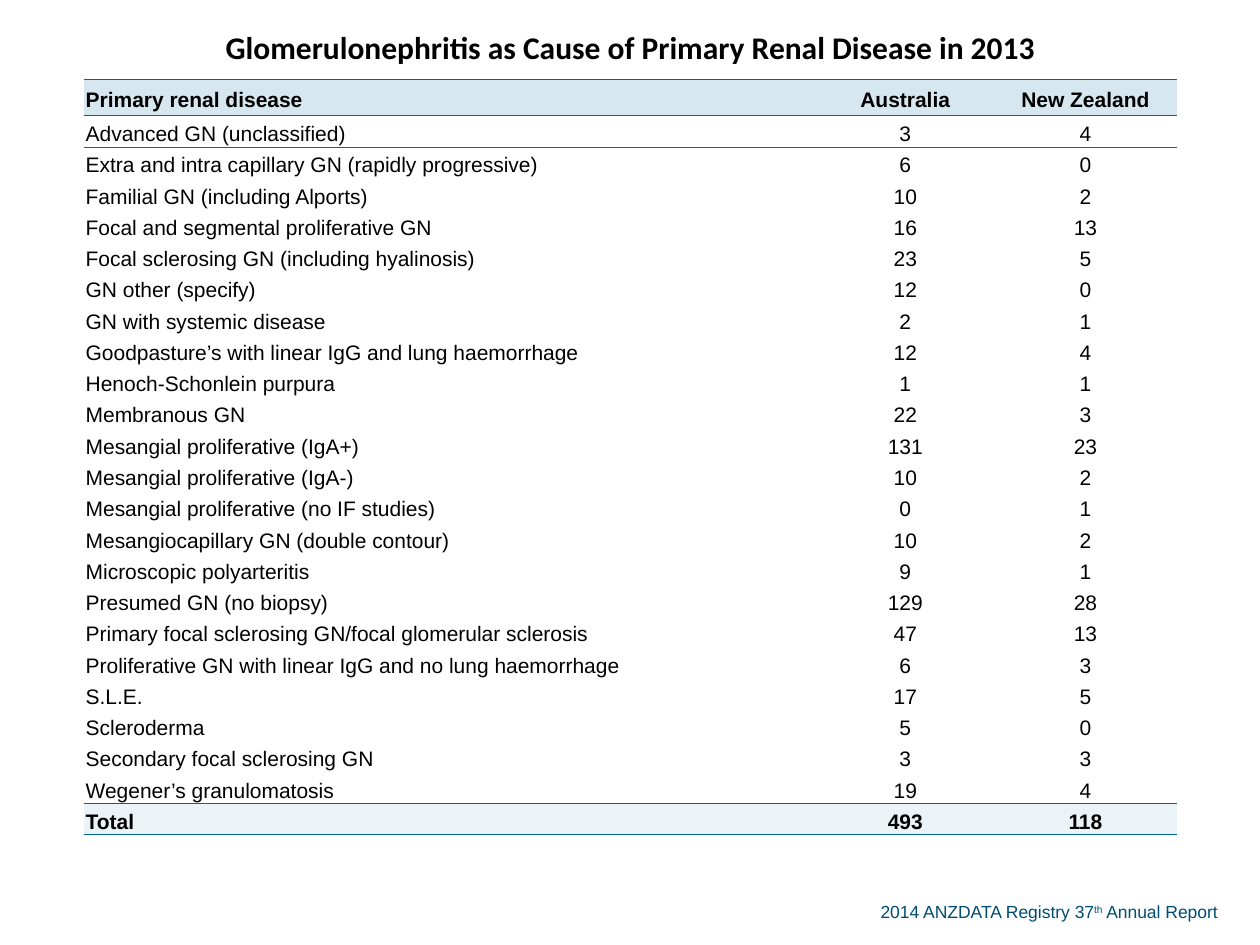
from dataclasses import dataclass

from lxml.etree import SubElement
from pptx import Presentation
from pptx.dml.color import RGBColor
from pptx.enum.text import MSO_ANCHOR, PP_ALIGN
from pptx.oxml.ns import qn
from pptx.util import Inches, Pt


@dataclass(frozen=True)
class Theme:
    """Colours, fonts and type sizes of the slide."""
    ink: str = "000000"
    rule: str = "006699"
    header: str = "D7E7EF"
    total: str = "EBF3F7"
    source: str = "004D73"
    body_font: str = "Arial"
    title_font: str = "Calibri"
    title_size: int = 18
    body_size: int = 12
    source_size: int = 10
    rule_width: float = 0.5
    line_spacing: float = 1.19


THEME = Theme()
NO_GRID_STYLE = "{2D5ABB26-0587-4C30-8999-92F81FD0307C}"
TITLE = "Glomerulonephritis as Cause of Primary Renal Disease in 2013"
HEADER = ("Primary renal disease", "Australia", "New Zealand")
DISEASES = [
    ("Advanced GN (unclassified)", 3, 4),
    ("Extra and intra capillary GN (rapidly progressive)", 6, 0),
    ("Familial GN (including Alports)", 10, 2),
    ("Focal and segmental proliferative GN", 16, 13),
    ("Focal sclerosing GN (including hyalinosis)", 23, 5),
    ("GN other (specify)", 12, 0),
    ("GN with systemic disease", 2, 1),
    ("Goodpasture’s with linear IgG and lung haemorrhage", 12, 4),
    ("Henoch-Schonlein purpura", 1, 1),
    ("Membranous GN", 22, 3),
    ("Mesangial proliferative (IgA+)", 131, 23),
    ("Mesangial proliferative (IgA-)", 10, 2),
    ("Mesangial proliferative (no IF studies)", 0, 1),
    ("Mesangiocapillary GN (double contour)", 10, 2),
    ("Microscopic polyarteritis", 9, 1),
    ("Presumed GN (no biopsy)", 129, 28),
    ("Primary focal sclerosing GN/focal glomerular sclerosis", 47, 13),
    ("Proliferative GN with linear IgG and no lung haemorrhage", 6, 3),
    ("S.L.E.", 17, 5),
    ("Scleroderma", 5, 0),
    ("Secondary focal sclerosing GN", 3, 3),
    ("Wegener’s granulomatosis", 19, 4),
]
TOTAL = ("Total", 493, 118)
COLUMNS = (5.81, 1.41, 1.45)
TITLE_HEIGHT, HEADER_HEIGHT, BODY_HEIGHT = 0.5, 0.29, 5.71


def add_run(p, text, size, color, font=THEME.body_font, bold=False):
    """Append a formatted run to a paragraph."""
    r = p.add_run()
    r.text = text
    r.font.size, r.font.name, r.font.bold = Pt(size), font, bold
    r.font.color.rgb = RGBColor.from_string(color)
    return r


def set_rules(cell, sides):
    """Draw the named horizontal borders of a cell, top before bottom."""
    tc_pr = cell._tc.get_or_add_tcPr()
    for i, side in enumerate(sides):
        ln = SubElement(tc_pr, qn(f"a:ln{side}"), w=str(Pt(THEME.rule_width)))
        fill = SubElement(ln, qn("a:solidFill"))
        SubElement(fill, qn("a:srgbClr"), val=THEME.rule)
        tc_pr.remove(ln)
        tc_pr.insert(i, ln)


def fill_cell(cell, text, centred, size=THEME.body_size, font=THEME.body_font,
              bold=False, spacing=THEME.line_spacing, fill=None, rules=""):
    """Write and format one table cell."""
    cell.margin_left = cell.margin_right = cell.margin_top = Inches(0.01)
    cell.margin_bottom = 0
    cell.vertical_anchor = MSO_ANCHOR.MIDDLE
    p = cell.text_frame.paragraphs[0]
    p.alignment = PP_ALIGN.CENTER if centred else PP_ALIGN.LEFT
    p.line_spacing = spacing
    add_run(p, str(text), size, THEME.ink, font, bold)
    if fill:
        cell.fill.solid()
        cell.fill.fore_color.rgb = RGBColor.from_string(fill)
    else:
        cell.fill.background()
    set_rules(cell, rules)


def fill_row(table, index, values, **style):
    """Write a row with a left label and centred counts."""
    for col, value in enumerate(values):
        fill_cell(table.cell(index, col), value, centred=col > 0, **style)


def add_disease_table(slide):
    """Add the table of counts with its title row."""
    last = len(DISEASES) + 2
    body_row = BODY_HEIGHT / (len(DISEASES) + 1)
    height = TITLE_HEIGHT + HEADER_HEIGHT + BODY_HEIGHT
    table = slide.shapes.add_table(last + 1, len(COLUMNS), Inches(0.67), Inches(0.13),
                                   Inches(sum(COLUMNS)), Inches(height)).table
    table.first_row = table.horz_banding = False
    table._tbl.tblPr.find(qn("a:tableStyleId")).text = NO_GRID_STYLE
    for column, width in zip(table.columns, COLUMNS):
        column.width = Inches(width)
    heights = [TITLE_HEIGHT, HEADER_HEIGHT] + [body_row] * (last - 1)
    for row, row_height in zip(table.rows, heights):
        row.height = Inches(row_height)

    title = table.cell(0, 0)
    title.merge(table.cell(0, len(COLUMNS) - 1))
    fill_cell(title, TITLE, True, THEME.title_size, THEME.title_font,
              bold=True, spacing=1.0, rules="B")
    fill_row(table, 1, HEADER, bold=True, fill=THEME.header, rules="TB")
    edges = {2: "T", last - 1: "B"}
    for i, values in enumerate(DISEASES, start=2):
        fill_row(table, i, values, rules=edges.get(i, ""))
    fill_row(table, last, TOTAL, bold=True, fill=THEME.total, rules="TB")


def add_source(slide):
    """Add the report reference at the bottom right."""
    tf = slide.shapes.add_textbox(Inches(6.89), Inches(7.1),
                                  Inches(2.99), Inches(0.27)).text_frame
    tf.word_wrap = True
    p = tf.paragraphs[0]
    for text, raised in (("2014 ANZDATA Registry 37", False), ("th", True),
                         (" Annual Report", False)):
        r = add_run(p, text, THEME.source_size, THEME.source)
        if raised:
            r.font._element.set("baseline", "30000")


def main():
    """Build and save the slide."""
    prs = Presentation()
    prs.slide_width, prs.slide_height = Inches(10), Inches(7.5)
    slide = prs.slides.add_slide(prs.slide_layouts[6])
    add_source(slide)
    add_disease_table(slide)
    prs.save("out.pptx")


if __name__ == "__main__":
    main()
